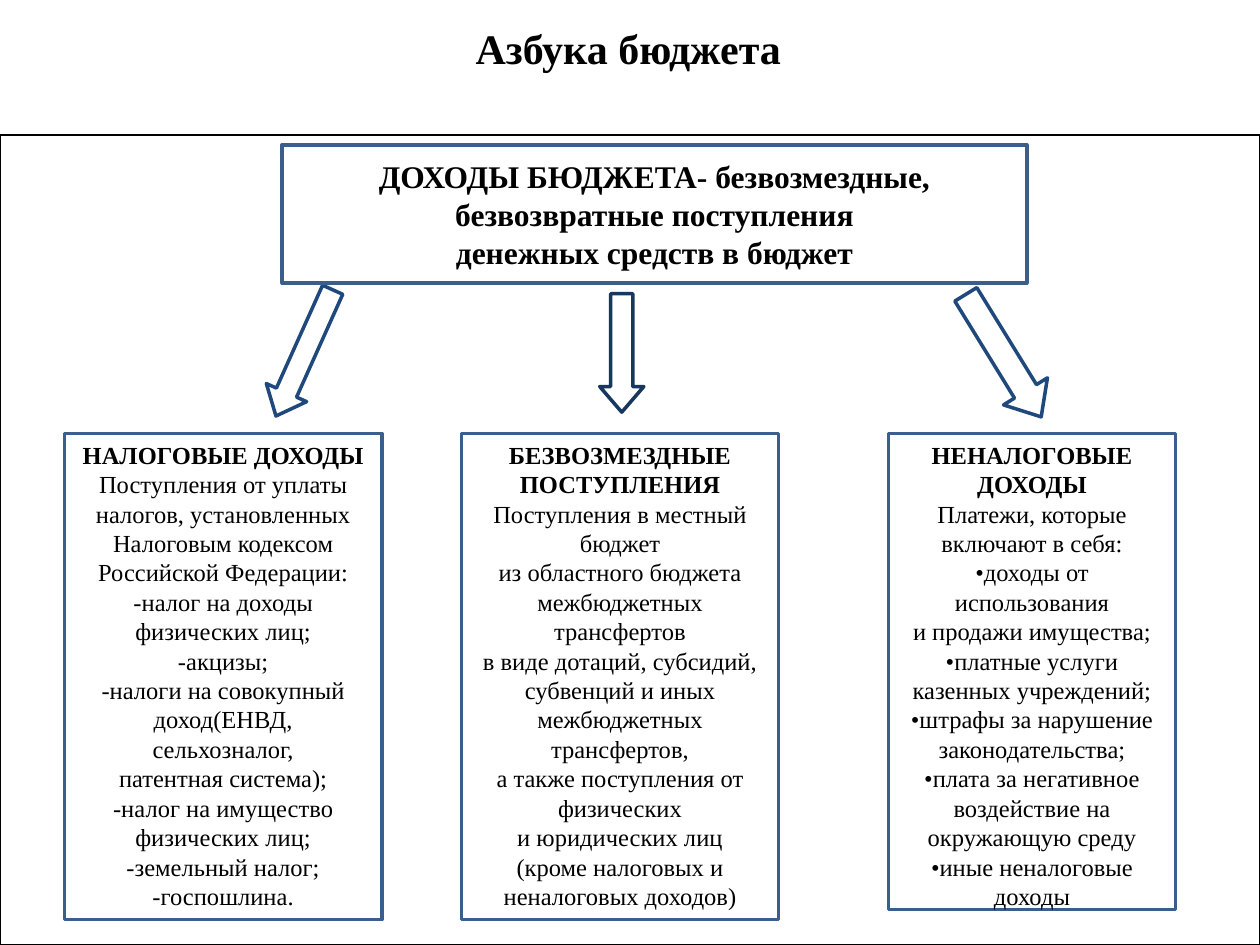
from dataclasses import dataclass

from pptx import Presentation
from pptx.dml.color import RGBColor
from pptx.enum.shapes import MSO_SHAPE
from pptx.enum.text import MSO_ANCHOR, MSO_AUTO_SIZE, PP_ALIGN
from pptx.shapes.autoshape import Shape
from pptx.slide import Slide
from pptx.text.text import TextFrame
from pptx.util import Cm, Pt

RECTANGLE = MSO_SHAPE.RECTANGLE
DOWN_ARROW = MSO_SHAPE.DOWN_ARROW
TOP, MIDDLE = MSO_ANCHOR.TOP, MSO_ANCHOR.MIDDLE
CENTER = PP_ALIGN.CENTER
NO_AUTOSIZE = MSO_AUTO_SIZE.NONE

FONT = "Times New Roman"
BLACK = "000000"
BOX_LINE = "3A5F8C"
TITLE_ONLY = 5


@dataclass
class Area:
    left: float
    top: float
    width: float
    height: float


@dataclass
class Box:
    area: Area
    headings: list[str]
    details: list[str]
    size: int = 14
    anchor: MSO_ANCHOR = TOP


@dataclass
class Arrow:
    area: Area
    color: str
    rotation: float = 0


COLUMN_TOP = 8.74

BOXES = [
    Box(
        Area(1.3, COLUMN_TOP, 6.4, 9.8),
        ["НАЛОГОВЫЕ ДОХОДЫ"],
        [
            "Поступления от уплаты",
            "налогов, установленных",
            "Налоговым кодексом",
            "Российской Федерации:",
            "-налог на доходы",
            "физических лиц;",
            "-акцизы;",
            "-налоги на совокупный",
            "доход(ЕНВД,",
            "сельхозналог,",
            "патентная система);",
            "-налог на имущество",
            "физических лиц;",
            "-земельный налог;",
            "-госпошлина.",
        ],
    ),
    Box(
        Area(5.69, 2.92, 15.01, 2.79),
        [
            "ДОХОДЫ БЮДЖЕТА- безвозмездные,",
            "безвозвратные поступления",
            "денежных средств в бюджет",
        ],
        [],
        size=18,
        anchor=MIDDLE,
    ),
    Box(
        Area(9.3, COLUMN_TOP, 6.4, 9.8),
        ["БЕЗВОЗМЕЗДНЫЕ", "ПОСТУПЛЕНИЯ"],
        [
            "Поступления в местный бюджет",
            "из областного бюджета",
            "межбюджетных трансфертов",
            "в виде дотаций, субсидий,",
            "субвенций и иных",
            "межбюджетных трансфертов,",
            "а также поступления от физических",
            "и юридических лиц",
            "(кроме налоговых и",
            "неналоговых доходов)",
        ],
    ),
    Box(
        Area(17.91, COLUMN_TOP, 5.79, 9.6),
        ["НЕНАЛОГОВЫЕ ДОХОДЫ"],
        [
            "Платежи, которые включают в себя:",
            "•доходы от использования",
            "и продажи имущества;",
            "•платные услуги",
            "казенных учреждений;",
            "•штрафы за нарушение",
            "законодательства;",
            "•плата за негативное",
            "воздействие на окружающую среду",
            "•иные неналоговые доходы",
        ],
    ),
]

ARROWS = [
    Arrow(Area(12.09, 5.92, 0.89, 2.39), "17375E"),
    Arrow(Area(19.71, 5.72, 1.04, 2.9), "1F497D", 328.4),
    Arrow(Area(5.69, 5.72, 0.89, 2.79), "1F497D", 24.2),
]


def rgb(color: str) -> RGBColor:
    return RGBColor.from_string(color)


def add_outline(
    slide: Slide, kind: MSO_SHAPE, area: Area, color: str, weight: float = 2
) -> Shape:
    outline = slide.shapes.add_shape(
        kind, Cm(area.left), Cm(area.top), Cm(area.width), Cm(area.height)
    )
    outline.shadow.inherit = False
    outline.fill.background()
    outline.line.color.rgb = rgb(color)
    outline.line.width = Pt(weight)
    return outline


def format_text(frame: TextFrame, size: int, bold_count: int) -> None:
    for index, paragraph in enumerate(frame.paragraphs):
        paragraph.alignment = CENTER
        for run in paragraph.runs:
            run.font.name = FONT
            run.font.size = Pt(size)
            run.font.bold = index < bold_count
            run.font.color.rgb = rgb(BLACK)


def add_title(slide: Slide, text: str, area: Area) -> None:
    title = slide.shapes.title
    title.left, title.top = Cm(area.left), Cm(area.top)
    title.width, title.height = Cm(area.width), Cm(area.height)
    frame = title.text_frame
    frame.text = text
    frame.word_wrap = False
    frame.auto_size = NO_AUTOSIZE
    frame.vertical_anchor = TOP
    format_text(frame, 24, 1)


def add_box(slide: Slide, box: Box) -> None:
    frame = add_outline(slide, RECTANGLE, box.area, BOX_LINE).text_frame
    frame.text = "\n".join(box.headings + box.details)
    frame.word_wrap = True
    frame.vertical_anchor = box.anchor
    format_text(frame, box.size, len(box.headings))


def add_arrow(slide: Slide, arrow: Arrow) -> None:
    pointer = add_outline(slide, DOWN_ARROW, arrow.area, arrow.color)
    pointer.rotation = arrow.rotation
    pointer.adjustments[1] = 0.58


def main() -> None:
    presentation = Presentation()
    presentation.slide_width, presentation.slide_height = Cm(25.4), Cm(19.05)
    slide = presentation.slides.add_slide(presentation.slide_layouts[TITLE_ONLY])
    add_title(slide, "Азбука бюджета", Area(9.3, 0.33, 6.73, 1.27))
    add_outline(slide, RECTANGLE, Area(0, 2.72, 25.4, 16.33), BLACK, 0.75)
    for arrow in ARROWS:
        add_arrow(slide, arrow)
    for box in BOXES:
        add_box(slide, box)
    presentation.save("out.pptx")


if __name__ == "__main__":
    main()
